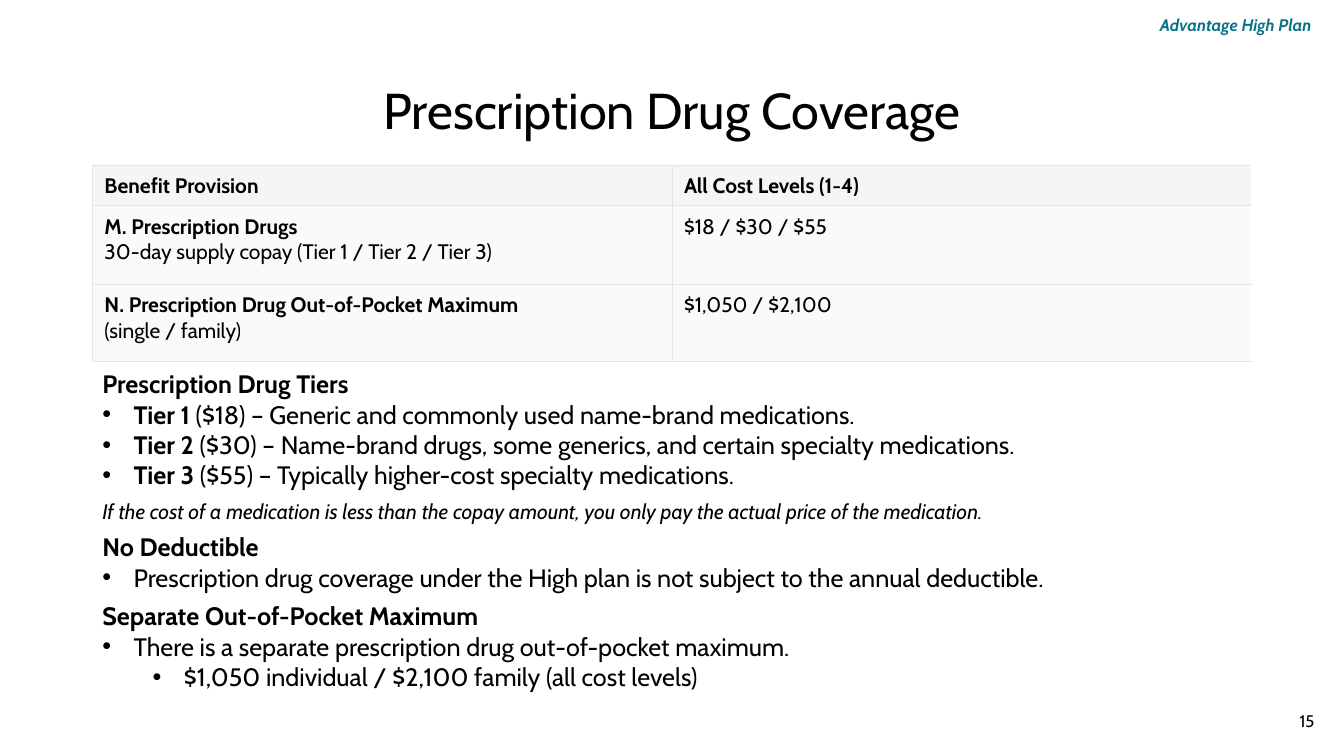
from lxml import etree
from pptx import Presentation
from pptx.dml.color import RGBColor
from pptx.enum.text import MSO_ANCHOR, PP_ALIGN
from pptx.oxml.ns import qn
from pptx.util import Inches, Pt

BLACK = RGBColor(0x00, 0x00, 0x00)
TEAL = RGBColor(0x09, 0x72, 0x8A)
HEAD = RGBColor(0xF5, 0xF5, 0xF5)
PALE = RGBColor(0xFA, 0xFA, 0xFA)
EDGE = RGBColor(0xE6, 0xE6, 0xE6)
LEFT, MID, RIGHT = PP_ALIGN.LEFT, PP_ALIGN.CENTER, PP_ALIGN.RIGHT
TOP, CENTER = MSO_ANCHOR.TOP, MSO_ANCHOR.MIDDLE

WIDE, HIGH = Inches(13.333), Inches(7.5)
COLS, ROWS = 160, 90
SIDE, SPAN = 11, 138
GAP = 6
HANG = 0.31

TABLE = [
    (4.32, HEAD, 0.07, [[("Benefit Provision", True)]],
     [[("All Cost Levels (1-4)", True)]]),
    (9.36, PALE, 0.07,
     [[("M. Prescription Drugs", True)],
      [("30-day supply copay (Tier 1 / Tier 2 / Tier 3)", False)]],
     [[("$18 / $30 / $55", False)]]),
    (9.24, PALE, 0.06,
     [[("N. Prescription Drug Out-of-Pocket Maximum", True)],
      [("(single / family)", False)]],
     [[("$1,050 / $2,100", False)]]),
]

TIERS = [
    ("Tier 1 ", "($18) – Generic and commonly used name-brand medications."),
    ("Tier 2 ", "($30) – Name-brand drugs, some generics, and certain specialty medications."),
    ("Tier 3 ", "($55) – Typically higher-cost specialty medications."),
]
NOTE = ("If the cost of a medication is less than the copay amount, "
        "you only pay the actual price of the medication.")
FREE = "Prescription drug coverage under the High plan is not subject to the annual deductible."
LIMIT = "There is a separate prescription drug out-of-pocket maximum."
SUMS = "$1,050 individual / $2,100 family (all cost levels)"


def across(cols):
    return round(WIDE * cols / COLS)


def down(rows):
    return round(HIGH * rows / ROWS)


def place(left, top, wide, high):
    return across(left), down(top), across(wide), down(high)


def assign(item, values):
    for name, value in values.items():
        setattr(item, name, value)


def write(para, text, size, color=BLACK, **style):
    run = para.add_run()
    run.text = text
    assign(run.font, {"name": "Cabin", "size": Pt(size), **style})
    run.font.color.rgb = color


def add_box(slide, area, anchor=TOP):
    frame = slide.shapes.add_textbox(*place(*area)).text_frame
    assign(frame, {"word_wrap": True, "vertical_anchor": anchor})
    return frame


def add_label(slide, area, text, size, align, color=BLACK, anchor=CENTER, **style):
    para = add_box(slide, area, anchor).paragraphs[0]
    para.alignment = align
    write(para, text, size, color, **style)
    return para


def add_edges(cell, sides):
    props = cell._tc.get_or_add_tcPr()
    for spot, side in enumerate(sides):
        line = etree.Element(qn(f"a:ln{side}"), w=str(Pt(0.75)))
        fill = etree.SubElement(line, qn("a:solidFill"))
        etree.SubElement(fill, qn("a:srgbClr"), val=str(EDGE))
        props.insert(spot, line)


def fill_cell(cell, lines, color, foot, sides):
    assign(cell, {"margin_left": Inches(0.12), "margin_right": Inches(0.08),
                  "margin_top": Inches(0.08), "margin_bottom": Inches(foot)})
    cell.fill.solid()
    cell.fill.fore_color.rgb = color
    add_edges(cell, sides)
    para = cell.text_frame.paragraphs[0]
    for spot, line in enumerate(lines):
        if spot:
            para.add_line_break()
        for text, bold in line:
            write(para, text, 15, bold=bold)


def add_grid(slide):
    high = sum(row[0] for row in TABLE)
    area = place(SIDE, 19.68, SPAN, high)
    table = slide.shapes.add_table(len(TABLE), 2, *area).table
    assign(table, {"first_row": False, "horz_banding": False})
    for spot, (tall, color, foot, *cells) in enumerate(TABLE):
        table.rows[spot].height = down(tall)
        for col, (lines, sides) in enumerate(zip(cells, ("LRTB", "LTB"))):
            fill_cell(table.cell(spot, col), lines, color, foot, sides)


def add_para(frame, gap=0):
    first = frame.paragraphs[0]
    para = frame.add_paragraph() if first.runs else first
    para.space_before = Pt(gap)
    return para


def add_head(frame, text, gap=GAP):
    write(add_para(frame, gap), text, 18, bold=True)


def add_point(frame, text, lead="", level=0):
    para = add_para(frame)
    para.level = level
    props = para._p.get_or_add_pPr()
    props.set("marL", str(Inches(HANG + level / 2)))
    props.set("indent", str(Inches(-HANG)))
    etree.SubElement(props, qn("a:buFont"), typeface="Arial")
    etree.SubElement(props, qn("a:buChar"), char="•")
    if lead:
        write(para, lead, 18, bold=True)
    write(para, text, 18, bold=False)


def add_body(slide):
    frame = add_box(slide, (SIDE, 43.32, SPAN, 39.96))
    add_head(frame, "Prescription Drug Tiers", 0)
    for lead, text in TIERS:
        add_point(frame, text, lead)
    write(add_para(frame, GAP), NOTE, 15, italic=True)
    add_head(frame, "No Deductible")
    add_point(frame, FREE)
    add_head(frame, "Separate Out-of-Pocket Maximum")
    add_point(frame, LIMIT)
    add_point(frame, SUMS, level=1)


def main():
    deck = Presentation()
    assign(deck, {"slide_width": WIDE, "slide_height": HIGH})
    slide = deck.slides.add_slide(deck.slide_layouts[6])
    title = add_label(slide, (SIDE, 4.8, SPAN, 17.4),
                      "Prescription Drug Coverage", 36, MID)
    title.line_spacing = 0.9
    add_grid(slide)
    add_label(slide, (121.68, 83.4, 36, 4.8), "15", 12, RIGHT)
    add_label(slide, (136.2, 1.2, 21.84, 3.6), "Advantage High Plan", 12, MID,
              TEAL, TOP, bold=True, italic=True)
    add_body(slide)
    deck.save("out.pptx")


if __name__ == "__main__":
    main()
